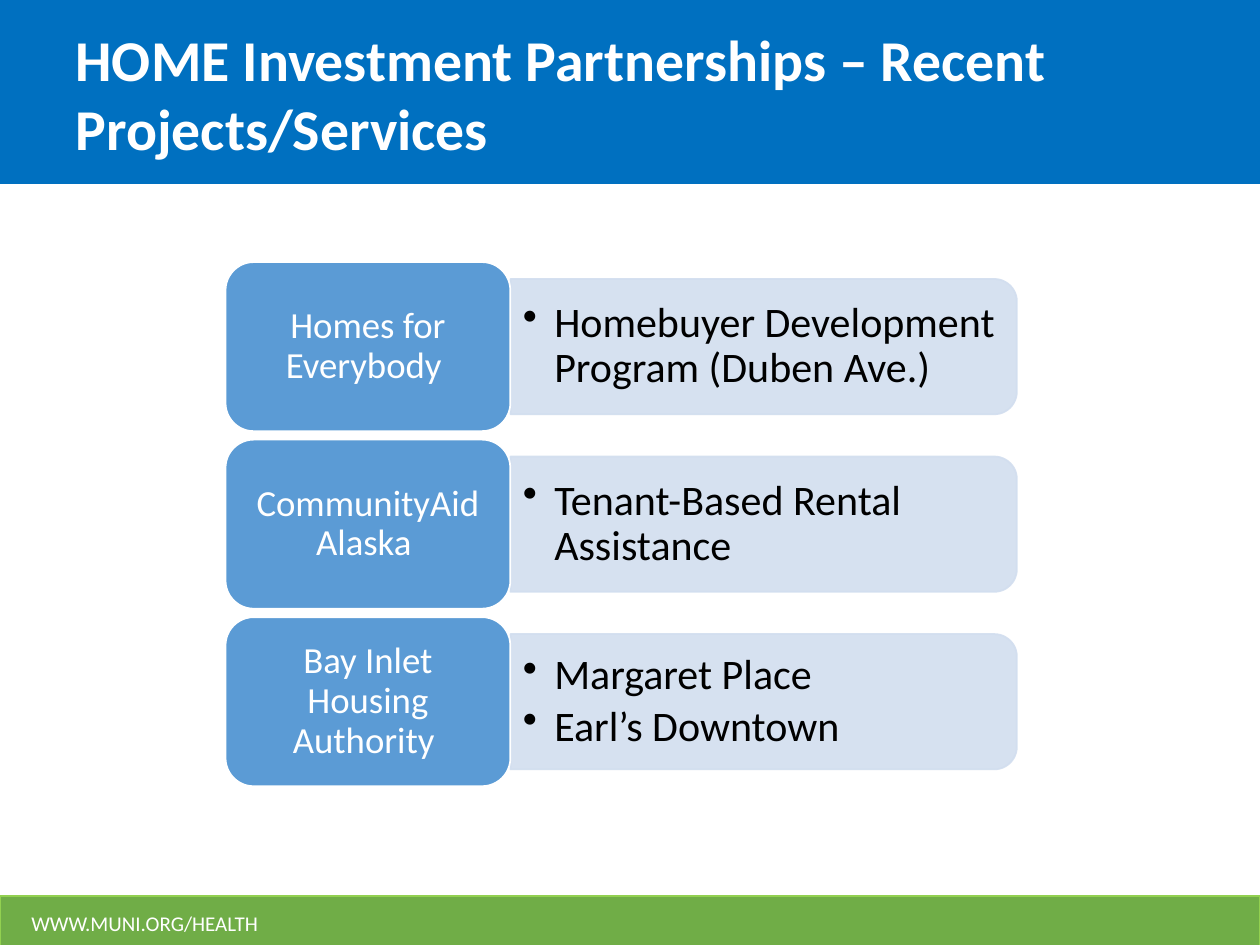
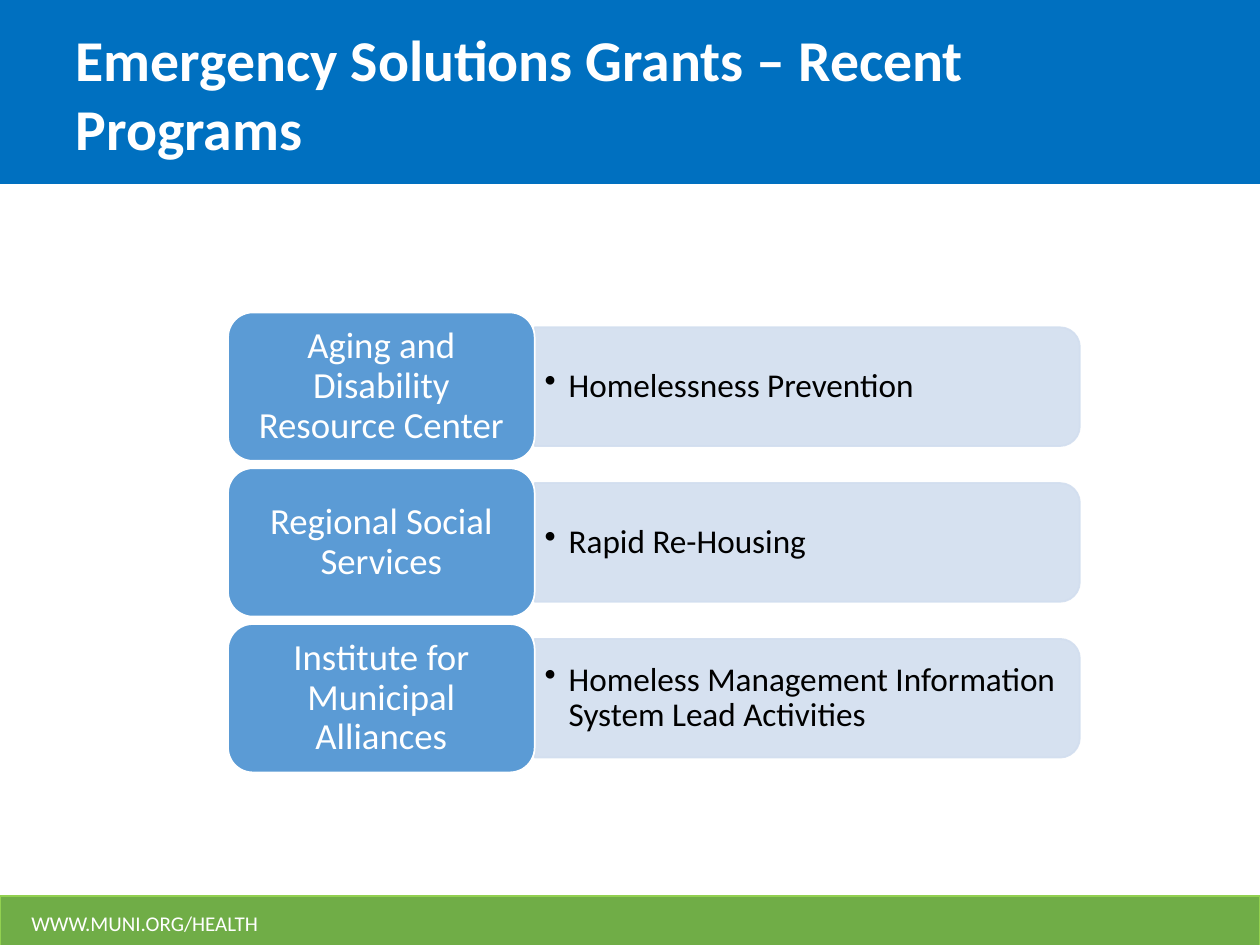
from lxml import etree
from pptx import Presentation
from pptx.dml.color import RGBColor
from pptx.enum.shapes import MSO_SHAPE
from pptx.enum.text import MSO_ANCHOR, MSO_AUTO_SIZE, PP_ALIGN
from pptx.oxml.ns import qn
from pptx.util import Inches, Pt

RECT = MSO_SHAPE.RECTANGLE
ROUNDED = MSO_SHAPE.ROUNDED_RECTANGLE
TAB = MSO_SHAPE.ROUND_2_SAME_RECTANGLE
LEFT, CENTER = PP_ALIGN.LEFT, PP_ALIGN.CENTER
MIDDLE, BOTTOM = MSO_ANCHOR.MIDDLE, MSO_ANCHOR.BOTTOM
NO_FIT = MSO_AUTO_SIZE.NONE

FONT = "Calibri"
WHITE, BLACK = "FFFFFF", "000000"
BLUE, GREEN, LIME = "0070C0", "70AD47", "92D050"
LEAD_BLUE, PALE_BLUE = "5B9BD5", "D2DEEF"

# Row proportions shared by both lists
LEAD_SHARE = 0.36    # label width / list width
DETAIL_SHARE = 0.8   # detail height / label height
GAP_SHARE = 0.05     # gap / label height


def color(hex_code):
    return RGBColor.from_string(hex_code)


def set_alpha(fill_parent, percent):
    for clr in fill_parent.iter(qn("a:srgbClr")):
        etree.SubElement(clr, qn("a:alpha")).set("val", str(percent * 1000))


def add_block(s, kind, x, y, w, h, fill, line=None, alpha=None):
    sp = s.shapes.add_shape(kind, Inches(x), Inches(y), Inches(w), Inches(h))
    sp.shadow.inherit = False
    sp.fill.solid()
    sp.fill.fore_color.rgb = color(fill)
    if line:
        sp.line.color.rgb = color(line)
        sp.line.width = Pt(1)
    else:
        sp.line.fill.background()
    if alpha:
        set_alpha(sp.element.spPr, alpha)
    return sp


def write(sp, *lines, size, fill=WHITE, bold=False, align=LEFT, anchor=MIDDLE,
          margins=(0.1, 0.05), spacing=1.0, after=0, bullet_indent=None):
    tf = sp.text_frame
    tf.word_wrap = True
    tf.auto_size = NO_FIT
    tf.vertical_anchor = anchor
    tf.margin_left = tf.margin_right = Inches(margins[0])
    tf.margin_top = tf.margin_bottom = Inches(margins[1])
    for i, line in enumerate(lines):
        p = tf.paragraphs[0] if i == 0 else tf.add_paragraph()
        p.alignment = align
        p.line_spacing = spacing
        p.space_after = Pt(after)
        r = p.add_run()
        r.text = line
        r.font.name = FONT
        r.font.size = Pt(size)
        r.font.bold = bold
        r.font.color.rgb = color(fill)
        if bullet_indent:
            pPr = p._p.get_or_add_pPr()
            pPr.set("marL", str(Inches(bullet_indent)))
            pPr.set("indent", str(-Inches(bullet_indent)))
            etree.SubElement(pPr, qn("a:buChar")).set("char", "•")


def add_textbox(s, x, y, w, h):
    return s.shapes.add_textbox(Inches(x), Inches(y), Inches(w), Inches(h))


def add_frame(s, title):
    """Header band, footer band and title."""
    add_block(s, RECT, 0, 0, 10, 1.46, BLUE)
    add_block(s, RECT, 0, 7.11, 10, 0.4, GREEN, LIME)
    write(add_textbox(s, 0.15, 7.13, 2.69, 0.4), "WWW.MUNI.ORG/HEALTH", size=12)

    sp = s.shapes.title
    sp.left, sp.top = Inches(0.5), Inches(0)
    sp.width, sp.height = Inches(8.81), Inches(1.34)
    write(sp, title, size=33, bold=True, anchor=BOTTOM)
    sp.element.getparent().append(sp.element)  # bring in front of the band


def add_row(s, x, y, w, h, label, details, size, indent, margins):
    """A label with a detail panel attached to its right side."""
    lead_w = w * LEAD_SHARE
    detail_x, detail_w = x + lead_w, w - lead_w
    detail_h = h * DETAIL_SHARE
    mid_y = y + h / 2

    # The panel is a tab turned a quarter, so its sides are swapped
    panel = add_block(s, TAB, detail_x + (detail_w - detail_h) / 2,
                      mid_y - detail_w / 2, detail_h, detail_w,
                      PALE_BLUE, PALE_BLUE, alpha=90)
    panel.rotation = 90
    text_h = detail_h - 0.1
    write(add_textbox(s, detail_x, mid_y - text_h / 2, detail_w - 0.05, text_h),
          *details, size=size, fill=BLACK, margins=margins, spacing=0.9,
          after=size * 0.15, bullet_indent=indent)

    lead = add_block(s, ROUNDED, x, y, lead_w, h, LEAD_BLUE, WHITE)
    write(lead, label, size=21, align=CENTER, margins=(0.09, 0.04), spacing=0.9)


def add_list_slide(prs, title, box, rows, **detail_format):
    s = prs.slides.add_slide(prs.slide_layouts[5])
    add_frame(s, title)
    x, y, w, h = box
    row_h = h / (len(rows) + (len(rows) - 1) * GAP_SHARE)
    for i, (label, details) in enumerate(rows):
        add_row(s, x, y + i * row_h * (1 + GAP_SHARE), w, row_h,
                label, details, **detail_format)


def main():
    prs = Presentation()
    prs.slide_width, prs.slide_height = Inches(10), Inches(7.5)

    add_list_slide(
        prs, "HOME Investment Partnerships – Recent Projects/Services",
        (1.79, 2.08, 6.28, 4.16),
        [("Homes for Everybody ", ["Homebuyer Development Program (Duben Ave.)"]),
         ("CommunityAid Alaska ", ["Tenant-Based Rental Assistance"]),
         ("Bay Inlet Housing Authority ", ["Margaret Place", "Earl’s Downtown"])],
        size=24, indent=0.25, margins=(0.1, 0.05))

    add_list_slide(
        prs, "Emergency Solutions Grants – Recent Programs",
        (1.81, 2.48, 6.76, 3.65),
        [("Aging and Disability Resource Center", ["Homelessness Prevention"]),
         ("Regional Social Services", ["Rapid Re-Housing"]),
         ("Institute for Municipal Alliances",
          ["Homeless Management Information System Lead Activities"])],
        size=19, indent=0.19, margins=(0.08, 0.04))

    prs.save("out.pptx")


if __name__ == "__main__":
    main()
